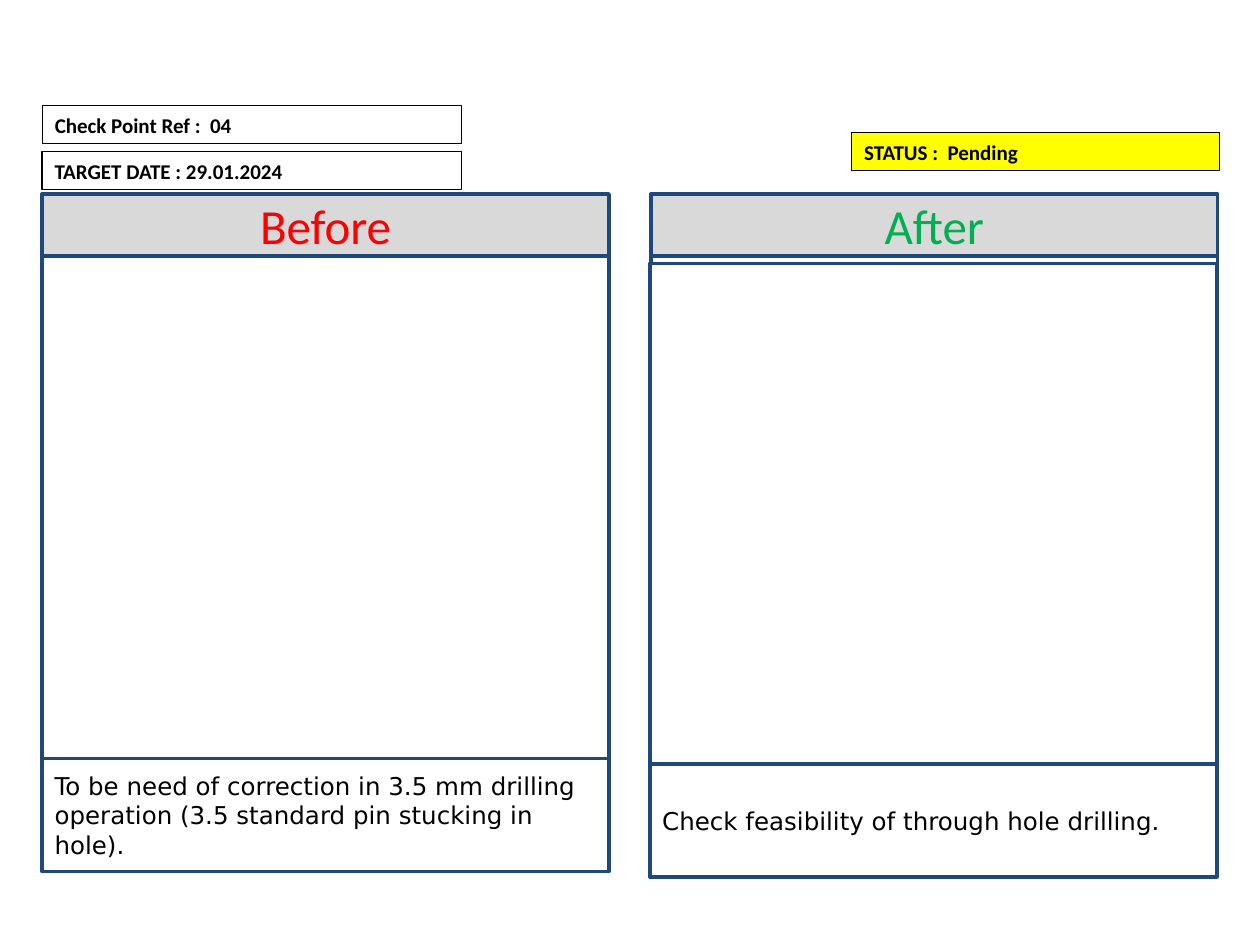
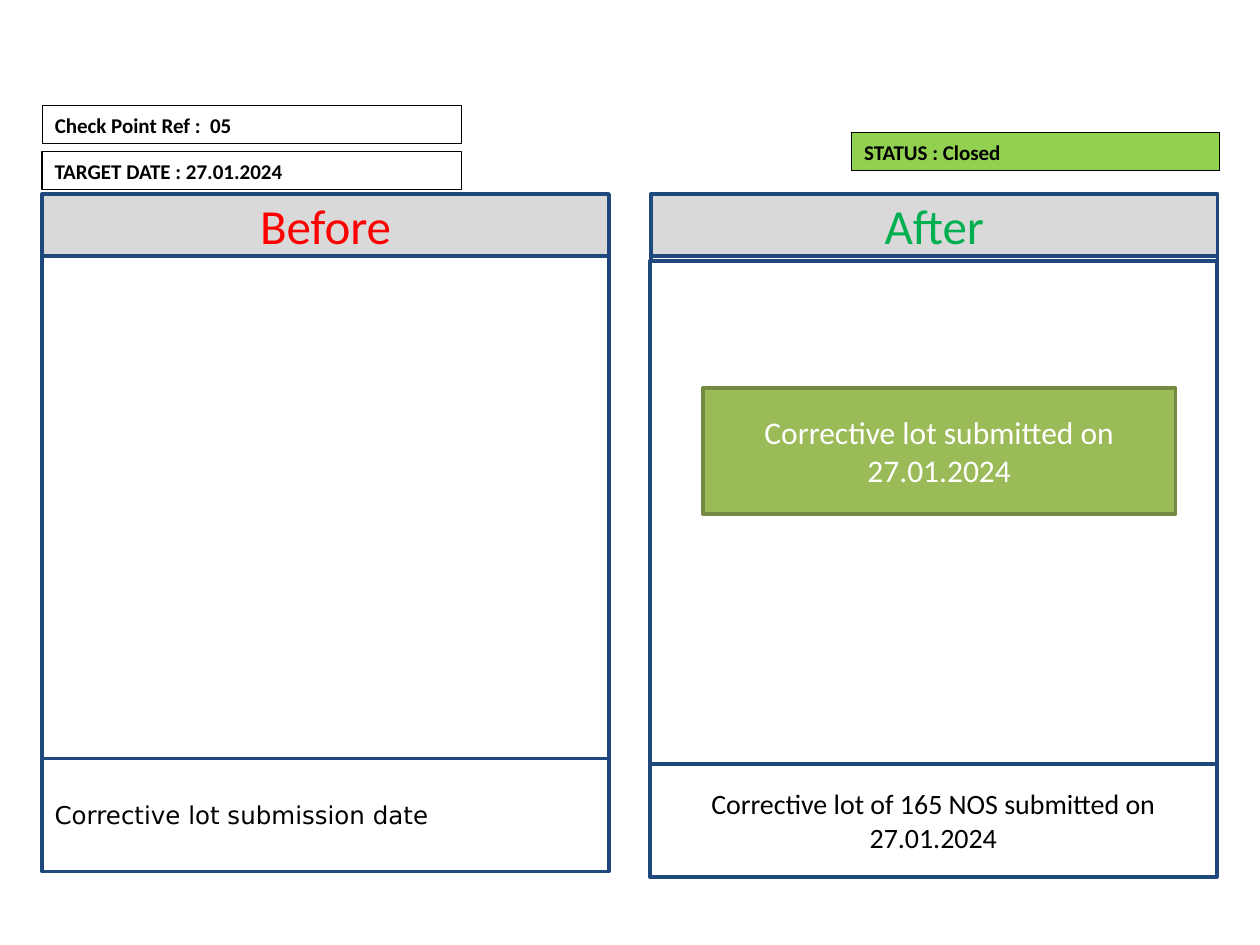
from dataclasses import dataclass

import pptx
import pptx.dml.color
import pptx.enum.shapes
import pptx.enum.text
import pptx.util

Cm = pptx.util.Cm
Pt = pptx.util.Pt
Align = pptx.enum.text.PP_ALIGN
Anchor = pptx.enum.text.MSO_ANCHOR


@dataclass(frozen=True)
class Theme:
    black: str = "000000"
    white: str = "FFFFFF"
    navy: str = "1F497D"
    grey: str = "D9D9D9"
    before: str = "FF0000"
    after: str = "00B050"
    pending: str = "FFFF00"
    closed: str = "92D050"
    callout: str = "9BBB59"
    callout_edge: str = "738A42"
    font: str = "Calibri"
    remark_font: str = "DejaVu Sans"
    label_size: float = 12
    remark_size: float = 14
    result_size: float = 16
    callout_size: float = 18
    heading_size: float = 28
    thin: float = 0.75
    thick: float = 2


THEME = Theme()


@dataclass(frozen=True)
class Area:
    """Left, top, width and height in centimetres."""
    left: float
    top: float
    width: float
    height: float


@dataclass(frozen=True)
class Look:
    fill: str | None
    line: str
    weight: float


@dataclass(frozen=True)
class TextStyle:
    size: float
    color: str = THEME.black
    font: str = THEME.font
    bold: bool = False
    align: Align = Align.LEFT
    anchor: Anchor = Anchor.MIDDLE


@dataclass(frozen=True)
class CheckPoint:
    reference: str
    target_date: str
    status: str
    status_color: str
    finding: str
    action: str
    action_style: TextStyle
    after_top: float
    callout: str = ""


# Shared looks and text styles
PANEL = Look(THEME.white, THEME.navy, THEME.thick)
OPEN_PANEL = Look(None, THEME.navy, THEME.thick)
HEADING = Look(THEME.grey, THEME.navy, THEME.thick)
LABEL = Look(None, THEME.black, THEME.thin)
CALLOUT = Look(THEME.callout, THEME.callout_edge, THEME.thick)

LABEL_TEXT = TextStyle(THEME.label_size, bold=True, anchor=Anchor.BOTTOM)
REMARK_TEXT = TextStyle(THEME.remark_size, font=THEME.remark_font)
RESULT_TEXT = TextStyle(THEME.result_size, align=Align.CENTER)
CALLOUT_TEXT = TextStyle(THEME.callout_size, THEME.white, align=Align.CENTER)

# Shared grid, in centimetres
LEFT, RIGHT, OVERLAY_LEFT = 0.85, 13.12, 13.1
PANEL_WIDTH, PANEL_HEIGHT = 11.43, 10.13
HEADING_TOP, HEADING_HEIGHT = 3.91, 1.25
PANEL_TOP = HEADING_TOP + HEADING_HEIGHT
REMARK_TOP, REMARK_HEIGHT = PANEL_TOP + PANEL_HEIGHT, 2.28
ACTION_TOP = 15.4
LABEL_HEIGHT = 0.77
REFERENCE_AREA = Area(LEFT, 2.13, 8.46, LABEL_HEIGHT)
DATE_AREA = Area(LEFT, 3.05, 8.46, LABEL_HEIGHT)
STATUS_AREA = Area(17.17, 2.67, 7.41, LABEL_HEIGHT)
CALLOUT_AREA = Area(14.17, 7.82, 9.53, 2.54)

CHECK_POINTS = [
    CheckPoint(
        "Check Point Ref :  04", "TARGET DATE : 29.01.2024",
        "STATUS :  Pending", THEME.pending,
        "To be need of correction in 3.5 mm drilling operation "
        "(3.5 standard pin stucking in hole).",
        "Check feasibility of through hole drilling.", REMARK_TEXT, 5.31),
    CheckPoint(
        "Check Point Ref :  05", "TARGET DATE : 27.01.2024",
        "STATUS : Closed", THEME.closed,
        "Corrective lot submission date",
        "Corrective lot of 165 NOS submitted on 27.01.2024", RESULT_TEXT, 5.26,
        "Corrective lot submitted on 27.01.2024"),
]


def rgb(color: str) -> pptx.dml.color.RGBColor:
    return pptx.dml.color.RGBColor.from_string(color)


def format_box(box, look: Look) -> None:
    box.shadow.inherit = False
    if look.fill is None:
        box.fill.background()
    else:
        box.fill.solid()
        box.fill.fore_color.rgb = rgb(look.fill)
    box.line.color.rgb = rgb(look.line)
    box.line.width = Pt(look.weight)


def write_text(box, text: str, style: TextStyle) -> None:
    frame = box.text_frame
    frame.word_wrap = True
    frame.auto_size = pptx.enum.text.MSO_AUTO_SIZE.NONE
    frame.vertical_anchor = style.anchor
    para = frame.paragraphs[0]
    para.alignment = style.align
    span = para.add_run()
    span.text = text
    span.font.name = style.font
    span.font.size = Pt(style.size)
    span.font.bold = style.bold
    span.font.color.rgb = rgb(style.color)


def add_box(page, area: Area, look: Look, text: str = "",
            style: TextStyle = LABEL_TEXT) -> None:
    box = page.shapes.add_shape(
        pptx.enum.shapes.MSO_SHAPE.RECTANGLE, Cm(area.left), Cm(area.top),
        Cm(area.width), Cm(area.height))
    format_box(box, look)
    if text:
        write_text(box, text, style)


def add_title(page, text: str) -> None:
    title = page.shapes.title
    title.left, title.top = Cm(REFERENCE_AREA.left), Cm(REFERENCE_AREA.top)
    title.width, title.height = Cm(REFERENCE_AREA.width), Cm(REFERENCE_AREA.height)
    format_box(title, LABEL)
    write_text(title, text, LABEL_TEXT)


def add_check_page(deck, point: CheckPoint) -> None:
    page = deck.slides.add_slide(deck.slide_layouts.get_by_name("Title Only"))

    # Reference, date and status labels
    add_title(page, point.reference)
    add_box(page, DATE_AREA, LABEL, point.target_date)
    status_look = Look(point.status_color, THEME.black, THEME.thin)
    add_box(page, STATUS_AREA, status_look, point.status)

    # Before and after columns
    columns = [(LEFT, "Before", THEME.before, PANEL),
               (RIGHT, "After", THEME.after, OPEN_PANEL)]
    for left, heading, color, look in columns:
        add_box(page, Area(left, HEADING_TOP, PANEL_WIDTH, HEADING_HEIGHT), HEADING,
                heading, TextStyle(THEME.heading_size, color, align=Align.CENTER))
        add_box(page, Area(left, PANEL_TOP, PANEL_WIDTH, PANEL_HEIGHT), look)
    add_box(page, Area(OVERLAY_LEFT, point.after_top, PANEL_WIDTH, PANEL_HEIGHT), PANEL)

    # Finding and action remarks
    add_box(page, Area(LEFT, REMARK_TOP, PANEL_WIDTH, REMARK_HEIGHT), PANEL,
            point.finding, REMARK_TEXT)
    add_box(page, Area(OVERLAY_LEFT, ACTION_TOP, PANEL_WIDTH, REMARK_HEIGHT), PANEL,
            point.action, point.action_style)
    if point.callout:
        add_box(page, CALLOUT_AREA, CALLOUT, point.callout, CALLOUT_TEXT)


def main() -> None:
    deck = pptx.Presentation()
    deck.slide_width, deck.slide_height = Cm(25.4), Cm(19.05)
    for point in CHECK_POINTS:
        add_check_page(deck, point)
    deck.save("out.pptx")


if __name__ == "__main__":
    main()
